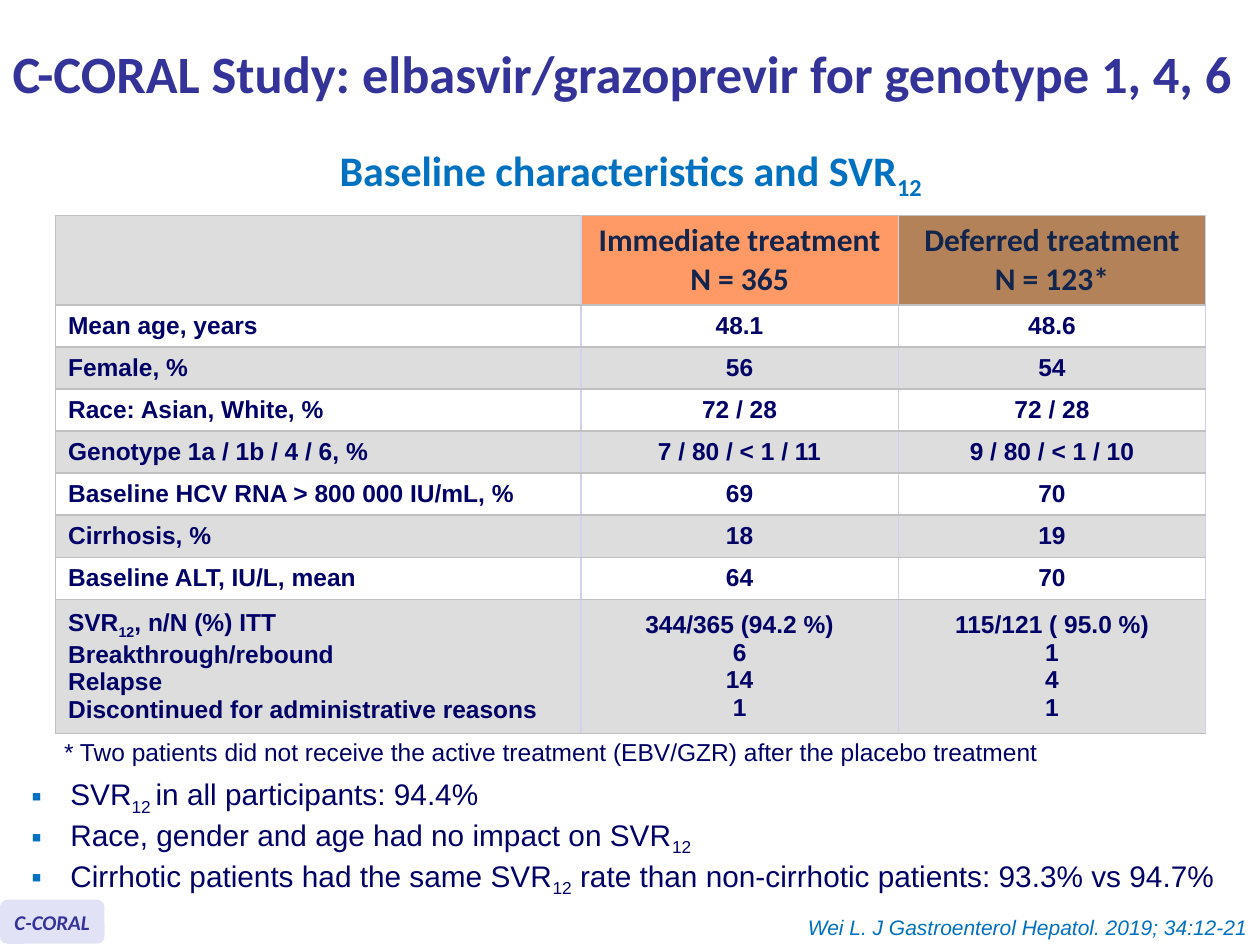
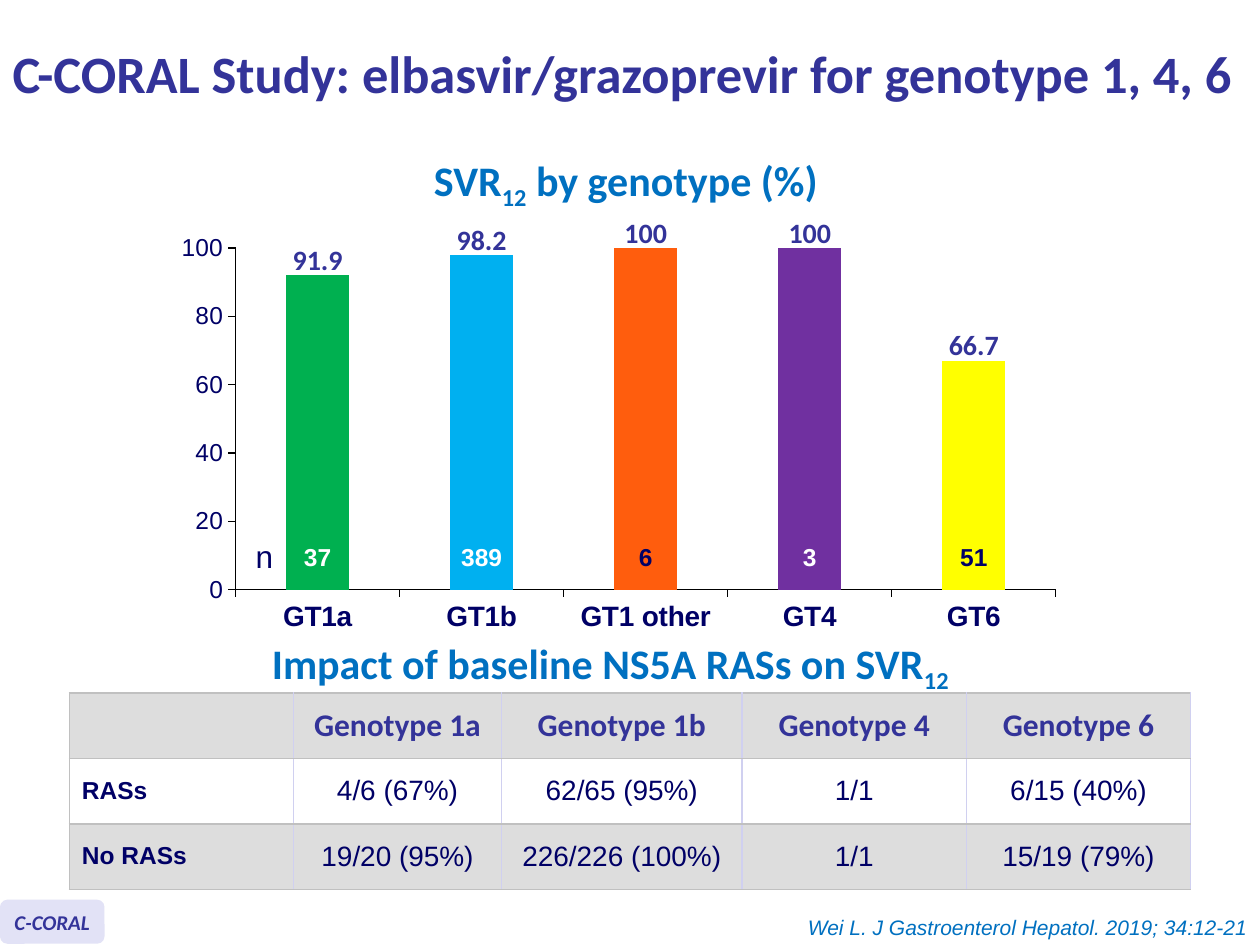
from lxml import etree
from pptx import Presentation
from pptx.chart.data import CategoryChartData
from pptx.dml.color import RGBColor
from pptx.enum.chart import XL_CHART_TYPE, XL_TICK_MARK
from pptx.enum.shapes import MSO_SHAPE
from pptx.enum.text import MSO_ANCHOR, MSO_AUTO_SIZE, PP_ALIGN
from pptx.oxml import parse_xml
from pptx.oxml.ns import nsdecls, qn
from pptx.util import Inches, Pt

LEFT, MID, RIGHT = PP_ALIGN.LEFT, PP_ALIGN.CENTER, PP_ALIGN.RIGHT
CENTER = MSO_ANCHOR.MIDDLE
FIXED = MSO_AUTO_SIZE.NONE
BARS = XL_CHART_TYPE.COLUMN_CLUSTERED
TICK = XL_TICK_MARK.OUTSIDE
ROUND = MSO_SHAPE.ROUNDED_RECTANGLE

HUES = {
    "title": "333399", "sky": "0070C0", "navy": "000066", "head": "12254C",
    "white": "FFFFFF", "black": "000000", "band": "DDDDDD", "pill": "E2E2F6",
    "rule": "C0C0C0", "side": "D0D0F0", "now": "FF9966", "later": "B48259",
    "green": "00B050", "blue": "00B0F0", "flame": "FF5D0D",
    "plum": "7030A0", "sun": "FFFF00",
}

# Text styles: font, size, colour, bold, italic
TITLE = ("Calibri", 30, "title", True, False)
HEADING = ("Calibri", 24, "sky", True, False)
TAG = ("Calibri", 12, "title", True, True)
CITE = ("Arial", 12, "sky", False, True)
ARM = ("Calibri", 18, "head", True, False)
GENE = ("Calibri", 18, "title", True, False)
BOLD = ("Arial", 14, "navy", True, False)
PALE = ("Arial", 14, "white", True, False)
NOTE = ("Arial", 14, "navy", False, False)
POINT = ("Arial", 17, "navy", False, False)
DATA = ("Arial", 16, "navy", False, False)
KEY = ("Arial", 18, "navy", False, False)
VALUE = ("Calibri", 16, "title", True, False)


def hue(name):
    return RGBColor.from_string(HUES[name])


def paint(font, style):
    font.name, size, tone, font.bold, font.italic = style
    font.size = Pt(size)
    font.color.rgb = hue(tone)


def write(frame, lines, style, align=LEFT, lead=None):
    """Fill a frame; text between bars is set as subscript."""
    for i, line in enumerate(lines):
        para = frame.paragraphs[0] if i == 0 else frame.add_paragraph()
        para.alignment = align
        if lead:
            para.line_spacing = lead
        for j, part in enumerate(line.split("|")):
            if part:
                run = para.add_run()
                run.text = part
                paint(run.font, style)
                if j % 2:
                    run.font._element.set("baseline", "-25000")


def label(slide, box, lines, style, align=LEFT, lead=None, wrap=True):
    frame = slide.shapes.add_textbox(*map(Inches, box)).text_frame
    frame.word_wrap = wrap
    write(frame, lines, style, align, lead)
    return frame


def frame_slide(deck):
    """Title, study tag and citation, common to every slide."""
    slide = deck.slides.add_slide(deck.slide_layouts[5])
    title = slide.shapes.title
    title.left, title.top, title.width, title.height = map(
        Inches, (0, 0.08, 10, 1.07))
    frame = title.text_frame
    frame.auto_size, frame.vertical_anchor = FIXED, CENTER
    write(frame, ["C-CORAL Study: elbasvir/grazoprevir for genotype 1, 4, 6"],
          TITLE, lead=0.85)

    tag = slide.shapes.add_shape(ROUND, *map(Inches, (0, 7.14, 0.83, 0.35)))
    tag.shadow.inherit = False
    tag.fill.solid()
    tag.fill.fore_color.rgb = hue("pill")
    tag.line.fill.background()
    tag.text_frame.word_wrap = False
    tag.text_frame.vertical_anchor = CENTER
    write(tag.text_frame, ["C-CORAL"], TAG)

    label(slide, (2.64, 7.21, 7.36, 0.3),
          ["Wei L. J Gastroenterol Hepatol. 2019; 34:12-21"], CITE, RIGHT)
    return slide


def edge(cell, first):
    """Draw the four borders of a cell."""
    tones = {"L": "rule" if first else "side", "R": "side",
             "T": "rule", "B": "rule"}
    props = cell._tc.get_or_add_tcPr()
    for i, (side, tone) in enumerate(tones.items()):
        props.insert(i, parse_xml(
            f'<a:ln{side} {nsdecls("a")} w="12700"><a:solidFill>'
            f'<a:srgbClr val="{HUES[tone]}"/></a:solidFill></a:ln{side}>'))


def grid(slide, box, wides, highs, rows, head, body, heads=(), lead=None):
    """Banded table; first column bold and left, the rest centred."""
    table = slide.shapes.add_table(
        len(rows), len(wides), *map(Inches, box)).table
    table.first_row = table.horz_banding = False
    for col, wide in zip(table.columns, wides):
        col.width = Inches(wide)
    for r, (row, high) in enumerate(zip(rows, highs)):
        table.rows[r].height = Inches(high)
        for c, text in enumerate(row):
            cell = table.cell(r, c)
            cell.vertical_anchor = CENTER
            tone = "white" if r % 2 else "band"
            if r == 0 and heads:
                tone = heads[c]
            cell.fill.solid()
            cell.fill.fore_color.rgb = hue(tone)
            edge(cell, c == 0)
            style = head if r == 0 else body if c else BOLD
            write(cell.text_frame, text.split("\n"), style,
                  MID if c else LEFT, None if c or r == 0 else lead)


def bullets(slide, box, lines):
    frame = label(slide, box, lines, POINT)
    for para in frame.paragraphs:
        props = para._p.get_or_add_pPr()
        props.set("marL", str(Inches(0.31)))
        props.set("indent", str(-Inches(0.31)))
        tint = etree.SubElement(props, qn("a:buClr"))
        etree.SubElement(tint, qn("a:srgbClr")).set("val", HUES["sky"])
        etree.SubElement(props, qn("a:buFont")).set("typeface", "Arial")
        etree.SubElement(props, qn("a:buChar")).set("char", "▪")


def bar_chart(slide, box, bars):
    """Column chart with its values above and counts inside the bars."""
    x, y, wide, high = box
    data = CategoryChartData()
    data.categories = [bar[0] for bar in bars]
    data.add_series("Series 1", [bar[1] for bar in bars])
    chart = slide.shapes.add_chart(BARS, *map(Inches, box), data).chart
    chart.has_legend = chart.has_title = False
    chart.font.name, chart.font.size = "Arial", Pt(18)

    plot = chart.plots[0]
    plot.gap_width, plot.vary_by_categories = 160, False
    for i, bar in enumerate(bars):
        fill = plot.series[0].points[i].format.fill
        fill.solid()
        fill.fore_color.rgb = hue(bar[4])

    scale = chart.value_axis
    scale.minimum_scale, scale.maximum_scale, scale.major_unit = 0, 100, 20
    scale.has_major_gridlines = False
    for axis, style in ((scale, NOTE),
                        (chart.category_axis, ("Arial", 16, "navy", True, False))):
        axis.major_tick_mark = TICK
        axis.format.line.color.rgb = hue("black")
        axis.format.line.width = Pt(0.75)
        paint(axis.tick_labels.font, style)

    # Fixed inner plot area, so that the labels can follow the bars
    left, top, span, rise = 0.57, 0.18, 6.51, 2.71
    area = chart._chartSpace.chart.plotArea
    for old in area.findall(qn("c:layout")):
        area.remove(old)
    spots = {"x": left / wide, "y": top / high,
             "w": span / wide, "h": rise / high}
    modes = "".join(f'<c:{k}Mode val="edge"/>' for k in "xy")
    sizes = "".join(f'<c:{k} val="{v:.4f}"/>' for k, v in spots.items())
    area.insert(0, parse_xml(
        f'<c:layout {nsdecls("c")}><c:manualLayout>'
        f'<c:layoutTarget val="inner"/>{modes}{sizes}'
        '</c:manualLayout></c:layout>'))

    step = span / len(bars)
    for i, (_, rate, shown, count, _, style) in enumerate(bars):
        mid = x + left + step * (i + 0.5)
        peak = y + top + rise * (1 - rate / 100)
        label(slide, (mid - 0.3, peak - 0.31, 0.6, 0.37), [shown], VALUE,
              MID, wrap=False)
        label(slide, (mid - 0.3, y + 2.46, 0.6, 0.34), [count], style,
              MID, wrap=False)
    label(slide, (x + 0.63, y + 2.42, 0.34, 0.4), ["n"], KEY, wrap=False)


def baseline_slide(deck):
    slide = frame_slide(deck)
    label(slide, (0.28, 1.34, 9.45, 0.31),
          ["Baseline characteristics and SVR|12|"], HEADING, MID, Pt(15.2))
    rows = [
        ("", "Immediate treatment N = 365", "Deferred treatment N = 123*"),
        ("Mean age, years", "48.1", "48.6"),
        ("Female, %", "56", "54"),
        ("Race: Asian, White, %", "72 / 28", "72 / 28"),
        ("Genotype 1a / 1b / 4 / 6, %", "7 / 80 / < 1 / 11",
         "9 / 80 / < 1 / 10"),
        ("Baseline HCV RNA > 800 000 IU/mL, %", "69", "70"),
        ("Cirrhosis, %", "18", "19"),
        ("Baseline ALT, IU/L, mean", "64", "70"),
        ("SVR|12|, n/N (%) ITT\nBreakthrough/rebound\nRelapse\n"
         "Discontinued for administrative reasons",
         "344/365 (94.2 %)\n6\n14\n1", "115/121 ( 95.0 %)\n1\n4\n1"),
    ]
    grid(slide, (0.44, 1.71, 9.13, 3.96), (4.17, 2.52, 2.44),
         [0.71] + [0.32] * 7 + [1], rows, ARM, BOLD,
         ("band", "now", "later"))
    label(slide, (0.41, 5.8, 7.99, 0.34),
          ["* Two patients did not receive the active treatment (EBV/GZR) "
           "after the placebo treatment"], NOTE, wrap=False)
    bullets(slide, (0.15, 6.11, 9.81, 0.96), [
        "SVR|12 |in all participants: 94.4%",
        "Race, gender and age had no impact on SVR|12|",
        "Cirrhotic patients had the same SVR|12| rate than "
        "non-cirrhotic patients: 93.3% vs 94.7%"])


def genotype_slide(deck):
    slide = frame_slide(deck)
    label(slide, (0.28, 1.42, 9.45, 0.35), ["SVR|12| by genotype (%) "],
          HEADING, MID, Pt(15.2))
    # Name, bar height, value shown, patients, bar colour, count style
    bar_chart(slide, (1.3, 1.79, 7.23, 3.3), [
        ("GT1a", 92, "91.9", "37", "green", PALE),
        ("GT1b", 98, "98.2", "389", "blue", PALE),
        ("GT1 other", 100, "100", "6", "flame", BOLD),
        ("GT4", 100, "100", "3", "plum", PALE),
        ("GT6", 67, "66.7", "51", "sun", BOLD)])
    label(slide, (2.06, 5.01, 6.14, 0.5),
          ["Impact of baseline NS5A RASs on SVR|12|"], HEADING)
    rows = [
        ("", "Genotype 1a", "Genotype 1b", "Genotype 4", "Genotype 6"),
        ("RASs", "4/6 (67%)", "62/65 (95%)", "1/1", "6/15 (40%)"),
        ("No RASs", "19/20 (95%)", "226/226 (100%)", "1/1", "15/19 (79%)"),
    ]
    grid(slide, (0.55, 5.5, 8.9, 1.57), (1.78, 1.65, 1.91, 1.78, 1.78),
         [0.52] * 3, rows, GENE, DATA, lead=Pt(15))


def main():
    deck = Presentation()
    deck.slide_width, deck.slide_height = Inches(10), Inches(7.5)
    baseline_slide(deck)
    genotype_slide(deck)
    deck.save("out.pptx")


if __name__ == "__main__":
    main()
